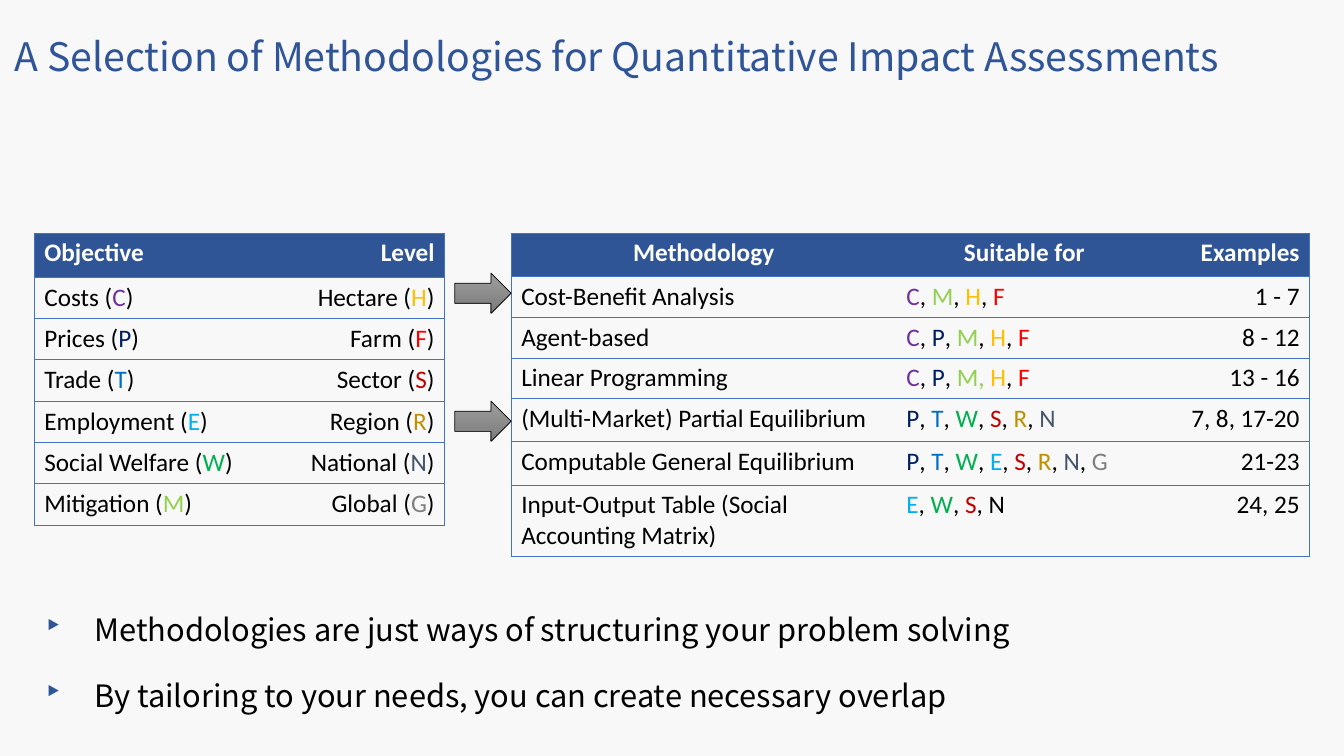
from dataclasses import dataclass

from lxml.etree import SubElement
from pptx import Presentation
from pptx.dml.color import RGBColor as Rgb
from pptx.enum.shapes import MSO_SHAPE as Shape
from pptx.enum.text import MSO_ANCHOR as Anchor, PP_ALIGN as Align
from pptx.oxml.ns import qn
from pptx.slide import Slide
from pptx.table import _Cell as Cell
from pptx.util import Inches, Pt


@dataclass(frozen=True)
class Theme:
    background: str = "F8F8F8"
    blue: str = "2F5597"
    border: str = "4472C4"
    black: str = "000000"
    white: str = "FFFFFF"
    arrow_top: str = "9D9D9D"
    arrow_bottom: str = "7C7C7C"
    heading_font: str = "Noto Sans CJK JP"
    table_font: str = "Calibri"
    title_size: int = 28
    bullet_size: int = 22
    table_size: int = 18
    line_width: float = 0.5


@dataclass(frozen=True)
class Grid:
    left: float
    top: float
    widths: list[float]
    heights: list[float]
    header_aligns: list[Align]
    body_aligns: list[Align]
    rows: list[list[str]]


THEME = Theme()
CODE_COLORS = {
    "C": "7030A0", "P": "002060", "T": "0070C0", "E": "00B0F0",
    "W": "00B050", "M": "92D050", "H": "FFC000", "F": "FF0000",
    "S": "C00000", "R": "BF9000", "N": "44546A", "G": "808080",
}
GRIDS = [
    Grid(0.34, 2.31, [2.12, 1.95], [0.44] + [0.41] * 6,
         [Align.LEFT, Align.RIGHT], [Align.LEFT, Align.RIGHT], [
             ["Objective", "Level"],
             ["Costs ([C])", "Hectare ([H])"],
             ["Prices ([P])", "Farm ([F])"],
             ["Trade ([T])", "Sector ([S])"],
             ["Employment ([E])", "Region ([R])"],
             ["Social Welfare ([W])", "National ([N])"],
             ["Mitigation ([M])", "Global ([G])"],
         ]),
    Grid(5.07, 2.31, [3.82, 2.54, 1.56], [0.43, 0.41, 0.4, 0.4, 0.43, 0.43, 0.71],
         [Align.CENTER, Align.CENTER, Align.RIGHT],
         [Align.LEFT, Align.LEFT, Align.RIGHT], [
             ["Methodology", "Suitable for", "Examples"],
             ["Cost-Benefit Analysis", "[C], [M], [H], [F]", "1 - 7"],
             ["Agent-based", "[C], [P], [M], [H], [F]", "8 - 12"],
             ["Linear Programming", "[C], [P], [M, ][H], [F]", "13 - 16"],
             ["(Multi-Market) Partial Equilibrium",
              "[P], [T], [W], [S], [R], [N]", "7, 8, 17-20"],
             ["Computable General Equilibrium",
              "[P], [T], [W], [E], [S], [R], [N], [G]", "21-23"],
             ["Input-Output Table (Social Accounting Matrix)",
              "[E], [W], [S], N", "24, 25"],
         ]),
]
ARROW_TOPS = [2.71, 3.98]
BULLETS = [
    "Methodologies are just ways of structuring your problem solving",
    "By tailoring to your needs, you can create necessary overlap",
]


def add_span(para, text: str, font: str, size: float, color: str, bold: bool = False) -> None:
    span = para.add_run()
    span.text = text
    span.font.name = font
    span.font.size = Pt(size)
    span.font.bold = bold
    span.font.color.rgb = Rgb.from_string(color)


def add_text_box(page: Slide, left: float, top: float, width: float, height: float):
    box = page.shapes.add_textbox(Inches(left), Inches(top), Inches(width), Inches(height))
    box.text_frame.word_wrap = True
    return box.text_frame


def draw_title(page: Slide, text: str) -> None:
    frame = add_text_box(page, 0.05, 0.27, 13.28, 0.57)
    frame.vertical_anchor = Anchor.MIDDLE
    add_span(frame.paragraphs[0], text, THEME.heading_font, THEME.title_size, THEME.blue)


def set_borders(cell: Cell, visible: dict[str, bool]) -> None:
    properties = cell._tc.get_or_add_tcPr()
    for side, shown in visible.items():
        line = SubElement(properties, qn(f"a:ln{side}"), w=str(Pt(THEME.line_width)))
        if shown:
            fill = SubElement(line, qn("a:solidFill"))
            SubElement(fill, qn("a:srgbClr"), val=THEME.border)
        else:
            SubElement(line, qn("a:noFill"))


def fill_cell(cell: Cell, text: str, align: Align, header: bool) -> None:
    para = cell.text_frame.paragraphs[0]
    para.alignment = align
    base = THEME.white if header else THEME.black
    for index, part in enumerate(text.replace("]", "[").split("[")):
        if part:
            color = CODE_COLORS[part[0]] if index % 2 else base
            add_span(para, part, THEME.table_font, THEME.table_size, color, header)
    if header:
        cell.fill.solid()
        cell.fill.fore_color.rgb = Rgb.from_string(THEME.blue)
    else:
        cell.fill.background()


def draw_grid(page: Slide, grid: Grid) -> None:
    table = page.shapes.add_table(
        len(grid.heights), len(grid.widths), Inches(grid.left), Inches(grid.top),
        Inches(sum(grid.widths)), Inches(sum(grid.heights))).table
    table.horz_banding = False
    for column, width in zip(table.columns, grid.widths):
        column.width = Inches(width)
    for row, height in zip(table.rows, grid.heights):
        row.height = Inches(height)
    last = len(grid.widths) - 1
    for r, texts in enumerate(grid.rows):
        aligns = grid.body_aligns if r else grid.header_aligns
        for c, (text, align) in enumerate(zip(texts, aligns)):
            cell = table.cell(r, c)
            set_borders(cell, {"L": c == 0, "R": c == last, "T": True, "B": True})
            fill_cell(cell, text, align, r == 0)


def draw_arrow(page: Slide, top: float) -> None:
    arrow = page.shapes.add_shape(
        Shape.RIGHT_ARROW, Inches(4.51), Inches(top), Inches(0.56), Inches(0.4))
    arrow.shadow.inherit = False
    arrow.fill.gradient()
    arrow.fill.gradient_angle = 270
    for stop, color in zip(arrow.fill.gradient_stops, [THEME.arrow_top, THEME.arrow_bottom]):
        stop.color.rgb = Rgb.from_string(color)
    arrow.line.color.rgb = Rgb.from_string(THEME.black)
    arrow.line.width = Pt(THEME.line_width)


def draw_bullets(page: Slide, texts: list[str]) -> None:
    frame = add_text_box(page, 0.34, 6.01, 11.52, 1.78)
    for index, text in enumerate(texts):
        para = frame.add_paragraph() if index else frame.paragraphs[0]
        properties = para._p.get_or_add_pPr()
        properties.set("marL", str(Inches(0.5)))
        properties.set("indent", str(-Inches(0.5)))
        bullet_color = SubElement(properties, qn("a:buClr"))
        SubElement(bullet_color, qn("a:srgbClr"), val=THEME.blue)
        SubElement(properties, qn("a:buChar"), char="‣")
        if index:
            para.space_before = Pt(21)
        add_span(para, text, THEME.heading_font, THEME.bullet_size, THEME.black)


def main() -> None:
    deck = Presentation()
    deck.slide_width, deck.slide_height = Inches(13.33), Inches(7.5)
    page = deck.slides.add_slide(deck.slide_layouts[6])
    page.background.fill.solid()
    page.background.fill.fore_color.rgb = Rgb.from_string(THEME.background)
    draw_title(page, "A Selection of Methodologies for Quantitative Impact Assessments")
    for grid in GRIDS:
        draw_grid(page, grid)
    for top in ARROW_TOPS:
        draw_arrow(page, top)
    draw_bullets(page, BULLETS)
    deck.save("out.pptx")


if __name__ == "__main__":
    main()
